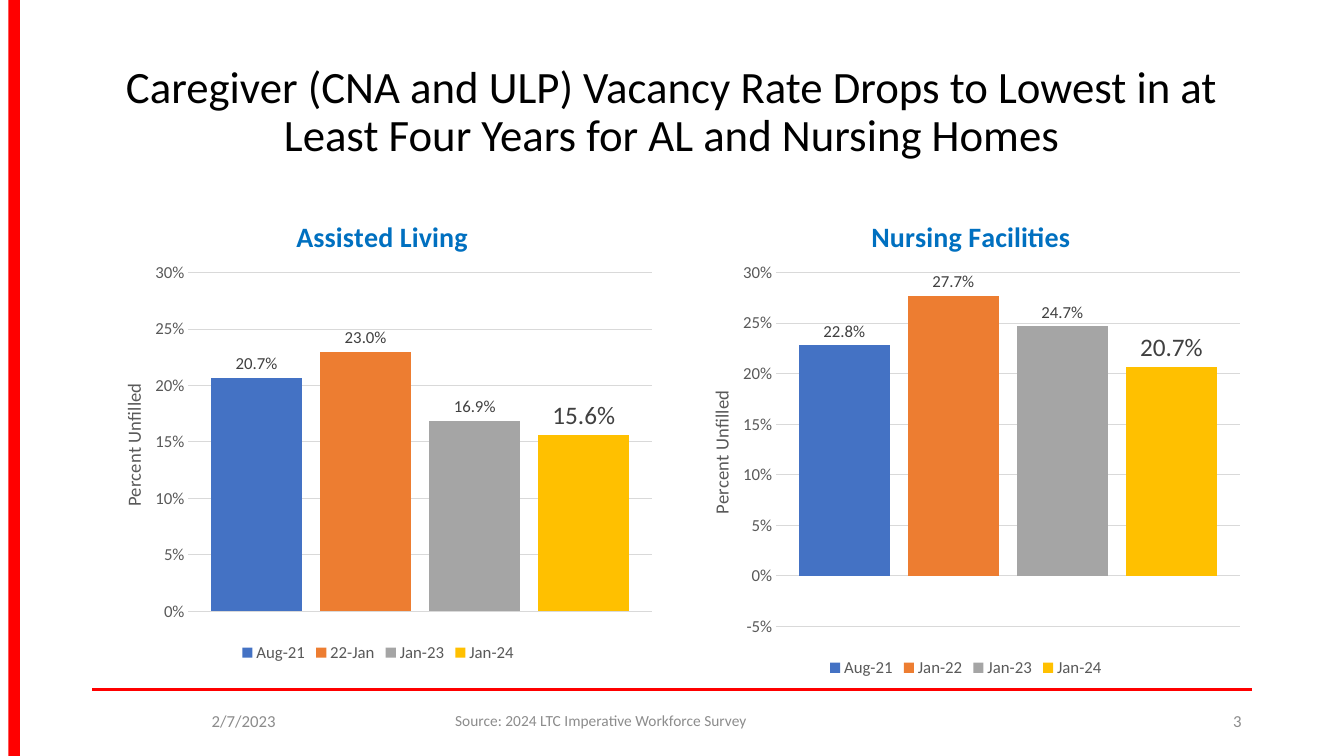
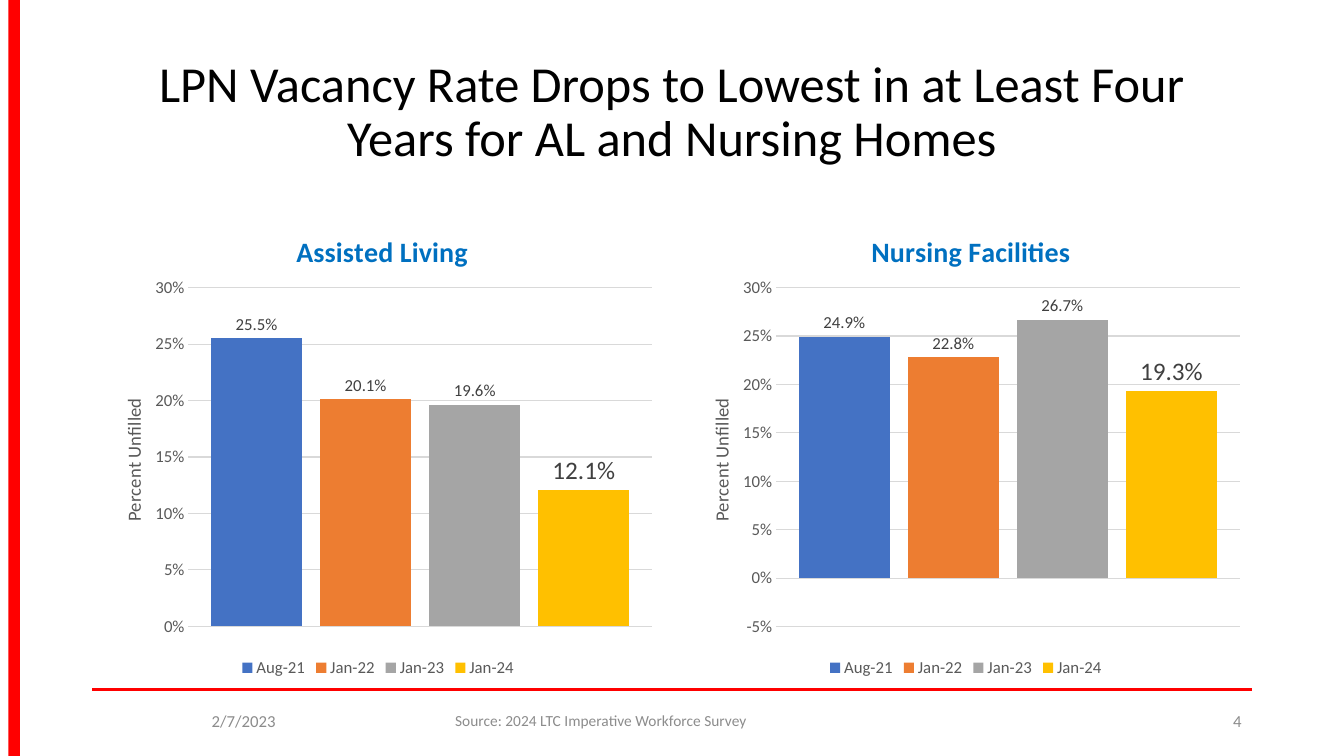
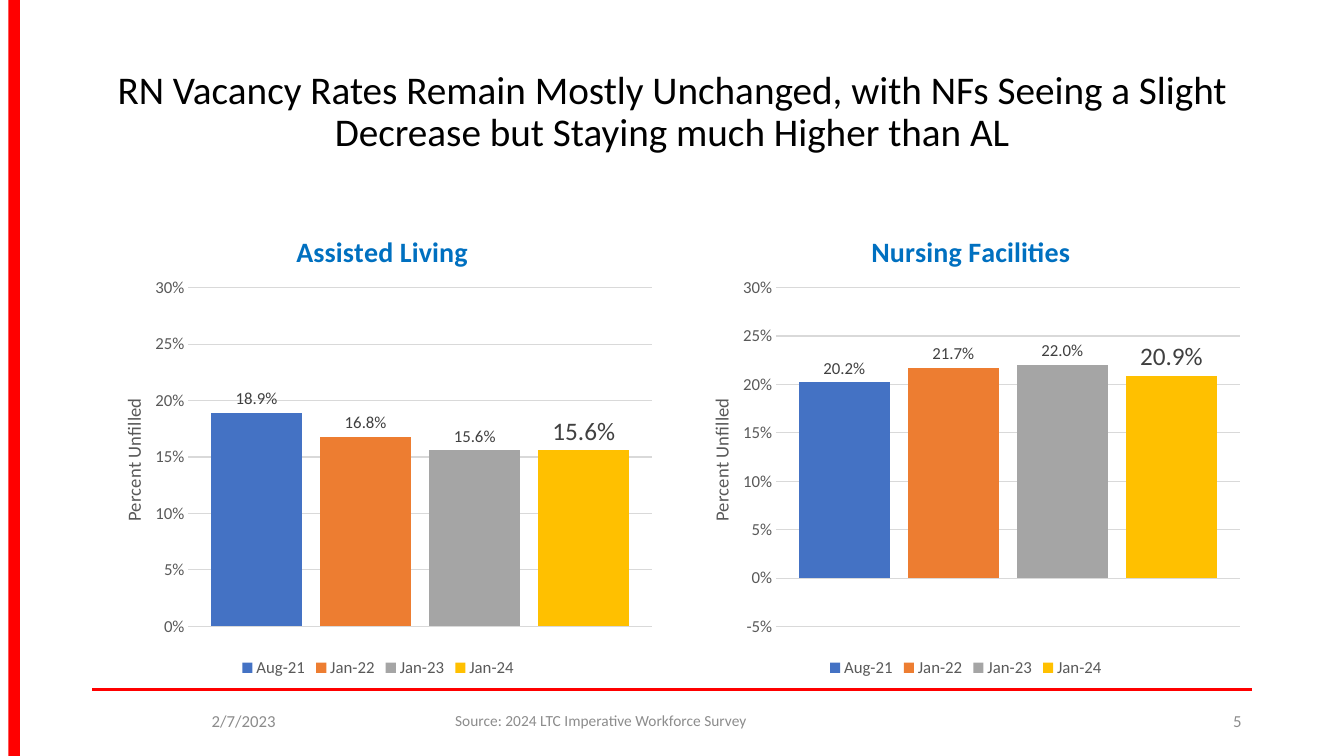
from dataclasses import dataclass
from lxml.etree import Element, SubElement
from pptx import Presentation
from pptx.chart.data import CategoryChartData
from pptx.dml.color import RGBColor
from pptx.enum.chart import (XL_CHART_TYPE, XL_LABEL_POSITION,
                             XL_LEGEND_POSITION, XL_TICK_MARK)
from pptx.enum.shapes import MSO_CONNECTOR, MSO_SHAPE
from pptx.enum.text import MSO_ANCHOR, MSO_AUTO_SIZE, PP_ALIGN
from pptx.oxml.ns import qn
from pptx.util import Cm, Pt


@dataclass(frozen=True)
class Theme:
    face: str = "Calibri"
    ink: str = "000000"
    red: str = "FF0000"
    blue: str = "0070C0"
    foot: str = "8C8C8C"
    axis: str = "595959"
    label: str = "404040"
    grid: str = "D9D9D9"
    bars: tuple = ("4472C4", "ED7D31", "A5A5A5", "FFC000")
    head: float = 20
    big: float = 18
    side: float = 13.3
    body: float = 12
    note: float = 11


def color(code):
    return RGBColor.from_string(code)


def put(item, **vals):
    for name, val in vals.items():
        setattr(item, name, val)


def pin(node, at, **spots):
    """Give a chart part a fixed place, in fractions of the chart."""
    for old in node.findall(qn("c:layout")):
        node.remove(old)
    layout = Element(qn("c:layout"))
    node.insert(at, layout)
    manual = SubElement(layout, qn("c:manualLayout"))
    vals = {"xMode": "edge", "yMode": "edge", **spots}
    if "w" in spots:
        vals = {"layoutTarget": "inner", **vals}
    for name, val in vals.items():
        text = val if isinstance(val, str) else f"{val:.4f}"
        SubElement(manual, qn("c:" + name)).set("val", text)


class Deck:
    left, wide = 2.33, 29.21
    chart_w, chart_h, floor = 14.4, 12.1, 17.18

    def __init__(self, theme):
        self.theme = theme
        self.show = Presentation()
        put(self.show, slide_width=Cm(33.87), slide_height=Cm(19.05))
        self.layout = self.show.slide_layouts.get_by_name("Title Only")
        self.slide = None

    def font(self, font, size, code, bold=False):
        put(font, name=self.theme.face, size=Pt(size), bold=bold)
        font.color.rgb = color(code)

    def add(self, title, size):
        first = self.slide is None
        self.slide = self.show.slides.add_slide(self.layout)
        if first:
            self.frame()
        box = self.slide.shapes.title
        put(box, left=Cm(self.left), top=Cm(1.01),
            width=Cm(self.wide), height=Cm(3.68))
        self.text(box, title, size, self.theme.ink, PP_ALIGN.CENTER)
        box.text_frame.paragraphs[0].line_spacing = 0.9

    def frame(self):
        """Draw the red band and rule once, on the shared layout."""
        shapes = self.slide.shapes
        band = shapes.add_shape(MSO_SHAPE.RECTANGLE, Cm(0.21), Cm(0),
                                Cm(0.29), Cm(19.05))
        band.shadow.inherit = False
        band.fill.solid()
        band.fill.fore_color.rgb = color(self.theme.red)
        band.line.fill.background()
        rule = shapes.add_connector(
            MSO_CONNECTOR.STRAIGHT, Cm(self.left), Cm(17.38),
            Cm(self.left + self.wide), Cm(17.38))
        rule.line.color.rgb = color(self.theme.red)
        rule.line.width = Pt(2)
        SubElement(rule.element.spPr, qn("a:effectLst"))
        for part in (rule, band):
            self.layout.shapes.element.append(part.element)

    def text(self, box, words, size, code, align):
        frame = box.text_frame
        put(frame, text=words, word_wrap=True, auto_size=MSO_AUTO_SIZE.NONE,
            vertical_anchor=MSO_ANCHOR.MIDDLE)
        para = frame.paragraphs[0]
        para.alignment = align
        self.font(para.runs[0].font, size, code)

    def foot(self, date, source, page):
        look = self.theme
        for words, left, width, size, align in (
                (source, 11.22, 11.43, look.note, PP_ALIGN.LEFT),
                (page, 23.92, 7.62, look.body, PP_ALIGN.RIGHT),
                (date, self.left, 7.62, look.body, PP_ALIGN.CENTER)):
            box = self.slide.shapes.add_textbox(
                Cm(left), Cm(17.65), Cm(width), Cm(1.01))
            self.text(box, words, size, look.foot, align)

    def name(self, title, words, size, code, bold, x, y):
        """Write a chart or axis title and pin it."""
        frame = title.text_frame
        frame.text = words
        self.font(frame.paragraphs[0].runs[0].font, size, code, bold)
        pin(title.element, 1, x=x, y=y)

    def chart(self, head, indent, left, top, high, low, names, rates):
        look = self.theme
        data = CategoryChartData(number_format="0.0%")
        data.categories = ["1"]
        for name, rate in zip(names, rates):
            data.add_series(name, [rate])
        chart = self.slide.shapes.add_chart(
            XL_CHART_TYPE.COLUMN_CLUSTERED, Cm(left), Cm(top),
            Cm(self.chart_w), Cm(high), data).chart
        self.font(chart.font, 10, look.ink)
        put(chart, has_title=True, has_legend=True)
        self.name(chart.chart_title, head, look.head, look.blue, True,
                  indent / self.chart_w, 0.63 / high)
        put(chart.legend, position=XL_LEGEND_POSITION.BOTTOM,
            include_in_layout=False)
        self.font(chart.legend.font, look.body, look.axis)
        self.scale(chart, low, high)
        self.bars(chart.plots[0])
        pad_x, pad_y = 2.42, 2.17
        pin(chart.element.find(".//" + qn("c:plotArea")), 0,
            x=pad_x / self.chart_w, y=pad_y / high,
            w=(self.chart_w - pad_x - 0.3) / self.chart_w,
            h=(high - pad_y - 1.39) / high)

    def scale(self, chart, low, high):
        look = self.theme
        chart.category_axis.visible = False
        axis = chart.value_axis
        put(axis, minimum_scale=low, maximum_scale=0.3, major_unit=0.05,
            major_tick_mark=XL_TICK_MARK.NONE,
            minor_tick_mark=XL_TICK_MARK.NONE,
            has_major_gridlines=True, has_title=True)
        axis.format.line.fill.background()
        grid = axis.major_gridlines.format.line
        grid.color.rgb = color(look.grid)
        grid.width = Pt(0.75)
        put(axis.tick_labels, number_format="0%",
            number_format_is_linked=False)
        self.font(axis.tick_labels.font, look.body, look.axis)
        middle = 2.17 + (high - 2.17 - 1.39) / 2
        self.name(axis.axis_title, "Percent Unfilled", look.side, look.axis,
                  False, 0.63 / self.chart_w, (middle - 1.57) / high)

    def bars(self, plot):
        look = self.theme
        put(plot, gap_width=50, overlap=-20, vary_by_categories=False)
        sizes = (look.body,) * 3 + (look.big,)
        for bar, code, size in zip(plot.series, look.bars, sizes):
            bar.invert_if_negative = False
            bar.format.fill.solid()
            bar.format.fill.fore_color.rgb = color(code)
            put(bar.data_labels, show_value=True, number_format="0.0%",
                number_format_is_linked=False,
                position=XL_LABEL_POSITION.OUTSIDE_END)
            self.font(bar.data_labels.font, size, look.label)

    def pair(self, top, names, living, nursing):
        """Place the two facility charts side by side."""
        self.chart("Assisted Living", 5.01, self.left, top, self.chart_h,
                   0, names, living)
        self.chart("Nursing Facilities", 4.69,
                   self.left + self.wide - self.chart_w, top,
                   self.floor - top, -0.05, MONTHS, nursing)


MONTHS = ("Aug-21", "Jan-22", "Jan-23", "Jan-24")
PAGES = (
    ("Caregiver (CNA and ULP) Vacancy Rate Drops to Lowest in at Least "
     "Four Years for AL and Nursing Homes", 32, 4.7,
     ("Aug-21", "22-Jan", "Jan-23", "Jan-24"),
     (0.207, 0.23, 0.169, 0.156), (0.228, 0.277, 0.247, 0.207)),
    ("LPN Vacancy Rate Drops to Lowest in at Least Four Years for AL and "
     "Nursing Homes", 36, 5.08, MONTHS,
     (0.255, 0.201, 0.196, 0.121), (0.249, 0.228, 0.267, 0.193)),
    ("RN Vacancy Rates Remain Mostly Unchanged, with NFs Seeing a Slight "
     "Decrease but Staying much Higher than AL", 28, 5.08, MONTHS,
     (0.189, 0.168, 0.156, 0.156), (0.202, 0.217, 0.22, 0.209)),
)


def main():
    deck = Deck(Theme())
    for page, (title, size, top, names, living, nursing) in enumerate(PAGES, 3):
        deck.add(title, size)
        deck.pair(top, names, living, nursing)
        deck.foot("2/7/2023", "Source: 2024 LTC Imperative Workforce Survey",
                  str(page))
    deck.show.save("out.pptx")


if __name__ == "__main__":
    main()
